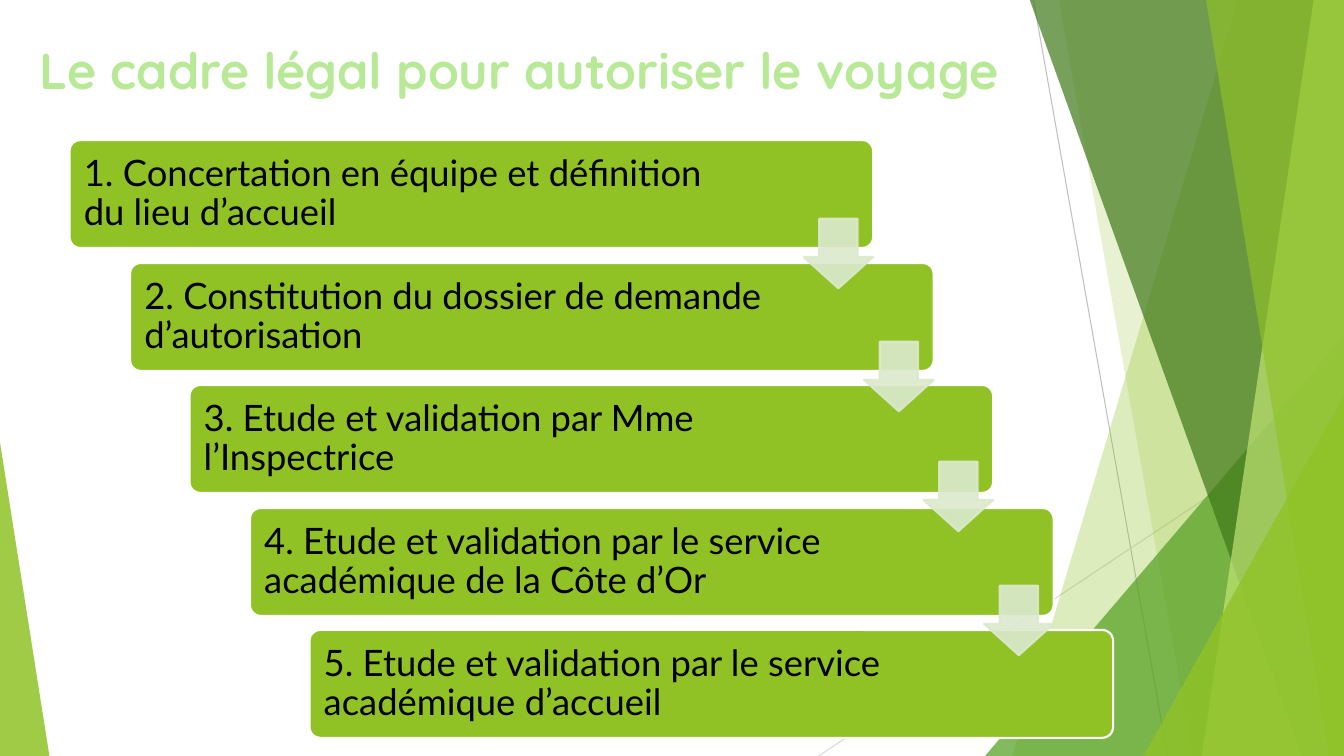
"""Build a slide of the five legal steps that authorise a school trip."""
import pptx
import pptx.dml.color
import pptx.enum.shapes
import pptx.enum.text
import pptx.oxml
import pptx.oxml.ns
import pptx.util

PX = 9144
WIDE, HIGH = 1333, 750
KIND = pptx.enum.shapes.MSO_SHAPE
MID = pptx.enum.text.MSO_ANCHOR.MIDDLE
LEFT = pptx.enum.text.PP_ALIGN.LEFT
HUES = {
    "lime": "90C226", "green": "54A021", "dark": "3F7819", "pale": "C0E474",
    "mint": "B7E996", "mist": "DBE9CD", "white": "FFFFFF", "black": "000000",
    "grey": "BFBFBF", "light": "D9D9D9",
}
LINES = [
    ((1025, 0, 1158, 750), "grey"),
    ((1333, 403, 812, 750), "light"),
]
SHARDS = [
    ("free", (1228, 1333, 1333, 1004), "lime", 30),
    ("free", (1050, 1333, 1333, 1183), "lime", 20),
    ("wedge", (977, 333, 356, 417, 1), "green", 72),
    ("free", (1021, 1333, 1333, 1291), "dark", 70),
    ("free", (1303, 1333, 1333, 1192), "pale", 70),
    ("free", (1196, 1333, 1333, 1318), "lime", 65),
    ("wedge", (1134, 393, 199, 357, 1), "lime", 80),
    ("wedge", (0, 439, 49, 311, 0), "lime", 85),
]
TITLE = "Le cadre légal pour autoriser le voyage"
STEPS = [
    "1. Concertation en équipe et définition du lieu d’accueil",
    "2. Constitution du dossier de demande d’autorisation",
    "3. Etude et validation par Mme l’Inspectrice",
    "4. Etude et validation par le service académique de la Côte d’Or",
    "5. Etude et validation par le service académique d’accueil",
]
TOPS = [217, 339, 458, 581]
HEAD = {"name": "Quicksand", "size": pptx.util.Pt(36), "bold": True}
BODY = {"name": "Lato", "size": pptx.util.Pt(26)}
PAD = {"margin_left": 11 * PX, "margin_right": 140 * PX,
       "margin_top": 11 * PX, "margin_bottom": 11 * PX}


def tone(name):
    """Return the colour that a name stands for."""
    return pptx.dml.color.RGBColor.from_string(HUES[name])


def apply(item, values):
    """Set each attribute of an item from a dict."""
    for key, value in values.items():
        setattr(item, key, value)


def paint(shape, hue, edge=None, alpha=100):
    """Fill and outline a shape, with opacity in percent."""
    shape.shadow.inherit = False
    shape.fill.solid()
    shape.fill.fore_color.rgb = tone(hue)
    if edge:
        shape.line.color.rgb = tone(edge)
        shape.line.width = pptx.util.Pt(1.5)
    else:
        shape.line.fill.background()
    if alpha < 100:
        for node in shape.element.spPr.iter(pptx.oxml.ns.qn("a:srgbClr")):
            node.append(pptx.oxml.parse_xml(
                f'<a:alpha {pptx.oxml.ns.nsdecls("a")} val="{alpha * 1000}"/>'))


def block(slide, kind, area, tweaks):
    """Add a preset shape with its adjustments."""
    shape = slide.shapes.add_shape(kind, *(n * PX for n in area))
    for spot, value in enumerate(tweaks):
        shape.adjustments[spot] = value
    return shape


def write(shape, text, font, hue, frame):
    """Write one left-aligned paragraph and return its run."""
    apply(shape.text_frame, {"word_wrap": True, "vertical_anchor": MID, **frame})
    para = shape.text_frame.paragraphs[0]
    para.alignment = LEFT
    run = para.add_run()
    run.text = text
    apply(run.font, font)
    run.font.color.rgb = tone(hue)
    return run


def rule(slide, ends, hue):
    """Add a thin straight line."""
    line = slide.shapes.add_connector(
        pptx.enum.shapes.MSO_CONNECTOR.STRAIGHT, *(n * PX for n in ends))
    line.line.color.rgb = tone(hue)
    line.line.width = pptx.util.Pt(0.75)
    line.element.spPr.append(pptx.oxml.parse_xml(
        f'<a:effectLst {pptx.oxml.ns.nsdecls("a")}/>'))


def shard(slide, kind, spots, hue, alpha):
    """Add a translucent full-height shard or a corner wedge."""
    if kind == "wedge":
        shape = block(slide, KIND.ISOSCELES_TRIANGLE, spots[:4], spots[4:])
    else:
        points = list(zip(spots, (-1, -1, HIGH, HIGH)))
        pen = slide.shapes.build_freeform(*points[0], scale=PX)
        pen.add_line_segments(points[1:], close=True)
        shape = pen.convert_to_shape()
    paint(shape, hue, alpha=alpha)


def title(slide):
    """Add the outlined title."""
    box = slide.shapes.add_textbox(*(n * PX for n in (29, 30, 1035, 77)))
    run = write(box, TITLE, HEAD, "mint", {})
    run.font.element.get_or_add_rPr().insert(0, pptx.oxml.parse_xml(
        f'<a:ln {pptx.oxml.ns.nsdecls("a")} w="{pptx.util.Pt(1.75)}"><a:solidFill>'
        f'<a:srgbClr val="{HUES["green"]}"/></a:solidFill></a:ln>'
    )) if hasattr(run.font, "element") else outline(run)


def outline(run):
    """Draw a green edge round the letters of a run."""
    edge = pptx.oxml.parse_xml(
        f'<a:ln {pptx.oxml.ns.nsdecls("a")} w="{pptx.util.Pt(1.75)}"><a:solidFill>'
        f'<a:srgbClr val="{HUES["green"]}"/></a:solidFill></a:ln>')
    run._r.get_or_add_rPr().insert(0, edge)


def step(slide, rank, text):
    """Add one step of the staircase."""
    area = (round(69 + 59.6 * rank), round(139 + 121.6 * rank), 797, 107)
    shape = block(slide, KIND.ROUNDED_RECTANGLE, area, [0.1])
    paint(shape, "lime", "white")
    write(shape, text, BODY, "black", PAD)
    shape.text_frame.paragraphs[0].line_spacing = 0.9


def arrow(slide, rank, top):
    """Add the arrow that leads to the next step."""
    area = (round(797 + 59.6 * rank), top, 69, 69)
    shape = block(slide, KIND.DOWN_ARROW, area, [0.55, 0.45])
    paint(shape, "mist", "mist", 90)


def main():
    """Build and save the slide."""
    deck = pptx.Presentation()
    apply(deck, {"slide_width": WIDE * PX, "slide_height": HIGH * PX})
    slide = deck.slides.add_slide(deck.slide_layouts[6])
    for ends, hue in LINES:
        rule(slide, ends, hue)
    for item in SHARDS:
        shard(slide, *item)
    title(slide)
    for rank, text in enumerate(STEPS):
        step(slide, rank, text)
    for rank, top in enumerate(TOPS):
        arrow(slide, rank, top)
    deck.save("out.pptx")


if __name__ == "__main__":
    main()
